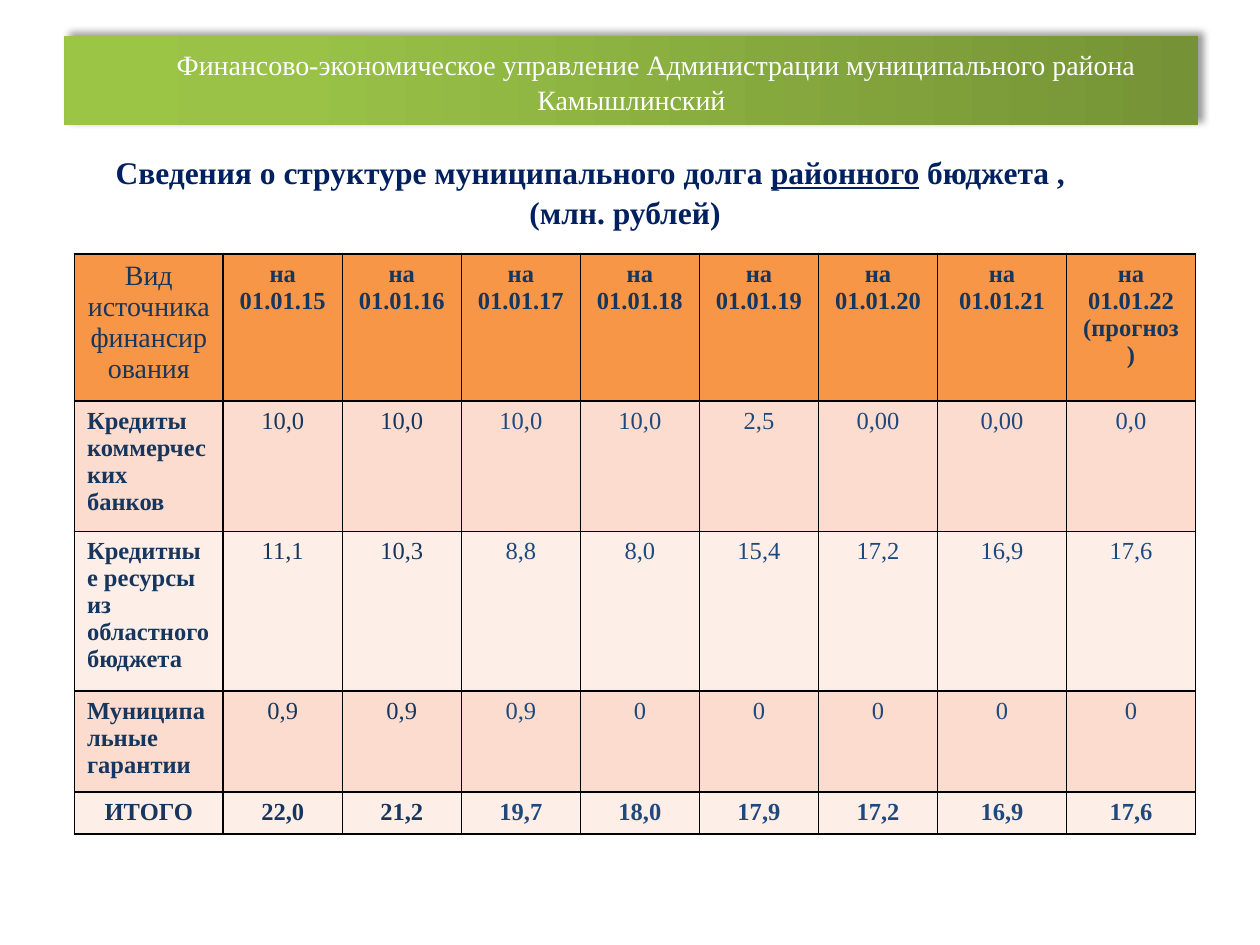
from lxml import etree
from pptx import Presentation, util as u
from pptx.dml.color import RGBColor
from pptx.enum import shapes, text
from pptx.oxml import parse_xml
from pptx.oxml.ns import nsdecls

FONT = "Times New Roman"
DARK, BLUE, NAVY = "17365D", "1F497D", "002060"
HEADER_FILL, BANDS = "F79646", ("FCDCCE", "FDEEE8")
COLS = [3.0] + [2.4] * 6 + [2.6] * 2
ROWS = [2.77, 2.43, 3.2, 1.9, 0.8]
DATA = [
    ["Вид источника финансирования"]
    + [f"на 01.01.{year}" for year in range(15, 22)] + ["на 01.01.22 (прогноз)"],
    ["Кредиты коммерческих банков",
     "10,0", "10,0", "10,0", "10,0", "2,5", "0,00", "0,00", "0,0"],
    ["Кредитные ресурсы из областного бюджета",
     "11,1", "10,3", "8,8", "8,0", "15,4", "17,2", "16,9", "17,6"],
    ["Муниципальные гарантии", "0,9", "0,9", "0,9", "0", "0", "0", "0", "0"],
    ["ИТОГО", "22,0", "21,2", "19,7", "18,0", "17,9", "17,2", "16,9", "17,6"],
]


def rgb(color):
    return RGBColor.from_string(color)


def add_run(p, words, size, color, bold=False, underline=False):
    r = p.add_run()
    r.text = words
    f = r.font
    f.name, f.size, f.bold, f.underline = FONT, u.Pt(size), bold, underline
    f.color.rgb = rgb(color)


def format_paragraph(p, align=text.PP_ALIGN.CENTER, spacing=None, **indents):
    """Indents are marL, marR or indent, in centimetres."""
    p.alignment = align
    if spacing:
        p.line_spacing = spacing
    for name, cm in indents.items():
        p._p.get_or_add_pPr().set(name, str(u.Cm(cm)))


def banner(s, x, y, w, h):
    sp = s.shapes.add_shape(shapes.MSO_SHAPE.RECTANGLE,
                            u.Cm(x), u.Cm(y), u.Cm(w), u.Cm(h))
    sp.line.fill.background()
    stops = "".join(
        f'<a:gs pos="{pos * 1000}"><a:srgbClr val="{color}"/></a:gs>'
        for pos, color in ((0, "759336"), (80, "99C247"), (100, "9BC545")))
    gradient = parse_xml(
        f'<a:gradFill {nsdecls("a")} rotWithShape="1"><a:gsLst>{stops}</a:gsLst>'
        '<a:lin ang="10800000" scaled="0"/></a:gradFill>')
    sp._element.spPr.find("{*}prstGeom").addnext(gradient)
    sp._element.spPr.append(parse_xml(
        f'<a:effectLst {nsdecls("a")}><a:outerShdw blurRad="{u.Pt(4)}" '
        f'dist="{u.Pt(3)}" dir="18900000" rotWithShape="0"><a:srgbClr val="000000">'
        '<a:alpha val="40000"/></a:srgbClr></a:outerShdw></a:effectLst>'))
    tf = sp.text_frame
    tf.word_wrap = True
    tf.vertical_anchor = text.MSO_ANCHOR.MIDDLE
    p = tf.paragraphs[0]
    format_paragraph(p, spacing=1.06, marL=0, indent=1.0)
    add_run(p, "Финансово-экономическое управление Администрации "
               "муниципального района Камышлинский", 16, "FFFFFF")


def heading(s, x, y, w, h):
    tf = s.shapes.add_textbox(u.Cm(x), u.Cm(y), u.Cm(w), u.Cm(h)).text_frame
    tf.word_wrap = True
    p = tf.paragraphs[0]
    format_paragraph(p, spacing=1.06, marR=1.6)
    for words, underline in (("Сведения о структуре муниципального долга ", False),
                             ("районного", True), (" бюджета ,", False)):
        add_run(p, words, 18, NAVY, bold=True, underline=underline)
    p = tf.add_paragraph()
    format_paragraph(p, spacing=1.06, marR=0.2)
    add_run(p, "(млн. рублей)", 18, NAVY, bold=True)


def cell_borders(cell, color="000000", width=1):
    tc_pr = cell._tc.get_or_add_tcPr()
    for i, side in enumerate(("lnL", "lnR", "lnT", "lnB")):
        tc_pr.insert(i, etree.fromstring(
            f'<a:{side} {nsdecls("a")} w="{u.Pt(width)}"><a:solidFill>'
            f'<a:srgbClr val="{color}"/></a:solidFill></a:{side}>'))


def debt_table(s, x, y):
    table = s.shapes.add_table(len(ROWS), len(COLS), u.Cm(x), u.Cm(y),
                               u.Cm(sum(COLS)), u.Cm(sum(ROWS))).table
    for col, width in zip(table.columns, COLS):
        col.width = u.Cm(width)
    for row, height in zip(table.rows, ROWS):
        row.height = u.Cm(height)
    total = len(DATA) - 1
    for i, values in enumerate(DATA):
        for j, value in enumerate(values):
            cell = table.cell(i, j)
            cell.fill.solid()
            cell.fill.fore_color.rgb = rgb(BANDS[(i - 1) % 2] if i else HEADER_FILL)
            cell_borders(cell)
            corner = i == j == 0
            row_label = j == 0 and 0 < i < total
            p = cell.text_frame.paragraphs[0]
            format_paragraph(p, text.PP_ALIGN.LEFT if row_label else text.PP_ALIGN.CENTER)
            add_run(p, value, 16 if corner else 14, BLUE if i and j > 2 else DARK,
                    bold=not corner and (i in (0, total) or j == 0))


def main():
    prs = Presentation()
    prs.slide_width, prs.slide_height = u.Cm(25.4), u.Cm(19.05)
    s = prs.slides.add_slide(prs.slide_layouts[6])
    banner(s, 1.3, 0.73, 22.86, 1.8)
    heading(s, 1.27, 2.92, 22.86, 1.8)
    debt_table(s, 1.5, 5.12)
    prs.save("out.pptx")


if __name__ == "__main__":
    main()
